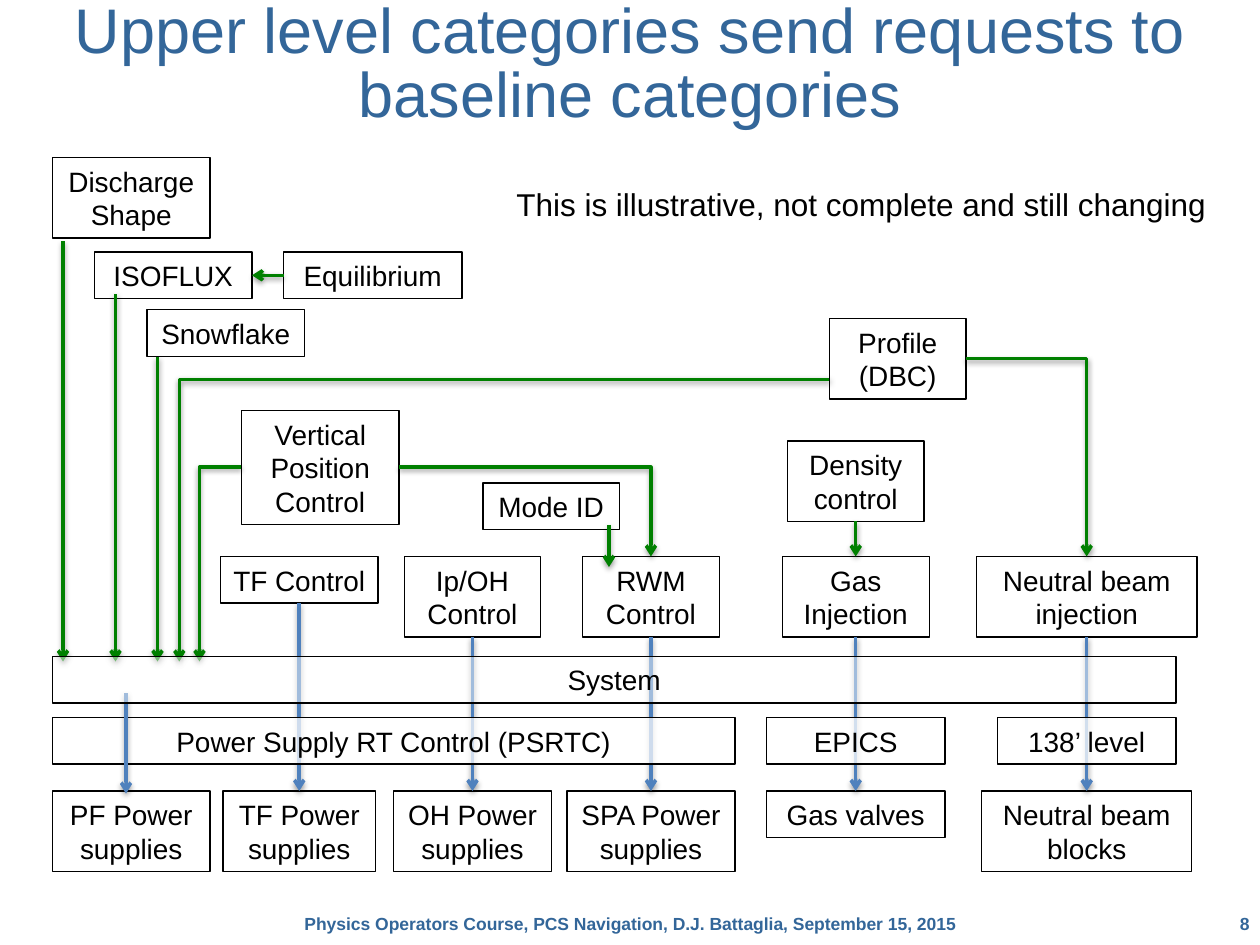
from lxml import etree
from pptx import Presentation
from pptx.dml.color import RGBColor
from pptx.enum.shapes import MSO_CONNECTOR, MSO_SHAPE
from pptx.enum.text import MSO_ANCHOR, MSO_AUTO_SIZE, PP_ALIGN
from pptx.oxml.ns import qn
from pptx.util import Pt

RECTANGLE = MSO_SHAPE.RECTANGLE
STRAIGHT, ELBOW = MSO_CONNECTOR.STRAIGHT, MSO_CONNECTOR.ELBOW
LEFT, CENTER, RIGHT = PP_ALIGN.LEFT, PP_ALIGN.CENTER, PP_ALIGN.RIGHT
MIDDLE = MSO_ANCHOR.MIDDLE
NO_AUTOFIT = MSO_AUTO_SIZE.NONE
TOP_SIDE, LEFT_SIDE, BOTTOM_SIDE, RIGHT_SIDE = range(4)

BLACK = RGBColor(0x00, 0x00, 0x00)
WHITE = RGBColor(0xFF, 0xFF, 0xFF)
TITLE_BLUE = RGBColor(0x33, 0x66, 0x99)
FLOW_BLUE = RGBColor(0x4F, 0x81, 0xBD)
REQUEST_GREEN = RGBColor(0x00, 0x80, 0x00)
FONT = "Arial"
BOX_HEIGHTS = {1: 26.7, 2: 46, 3: 65.4}

UPPER = [
    ("Discharge Shape", 0, 0, 90, 2),
    ("Vertical Position Control", 108, 144.5, 90, 3),
    ("ISOFLUX", 24, 54, 90, 1),
    ("Mode ID", 246, 186, 78, 1),
    ("Equilibrium", 132, 54, 102, 1),
    ("Snowflake", 54, 87, 90, 1),
    ("Density control", 420, 162, 78, 2),
    ("Profile (DBC)", 444, 92, 78, 2),
]
BASELINE = [
    ("TF Control", 96, 0, 90, 1),
    ("Ip/OH Control", 201, 0, 78, 2),
    ("RWM Control", 303, 0, 78, 2),
    ("Gas Injection", 417, 0, 84, 2),
    ("Neutral beam injection", 528, 0, 126, 2),
]
HARDWARE = [
    ("PF Power supplies", 0, 0, 90, 2),
    ("TF Power supplies", 97.5, 0, 87, 2),
    ("OH Power supplies", 195, 0, 90, 2),
    ("SPA Power supplies", 294, 0, 96, 2),
    ("Gas valves", 408, 0, 102, 1),
    ("Neutral beam blocks", 531, 0, 120, 2),
]
INTERFACES = [
    ("Power Supply RT Control (PSRTC)", 0, 0, 390, 1, 73),
    ("EPICS", 408, 0, 102, 1, 75),
    ("138’ level", 540, 0, 102, 1, 74),
]


def style_text(frame, text, size, color, align, bold=False):
    """Write one paragraph and format its run."""
    frame.text = text
    para = frame.paragraphs[0]
    para.alignment = align
    font = para.runs[0].font
    font.name, font.size, font.bold = FONT, Pt(size), bold
    font.color.rgb = color


def add_label(page, left, top, width, height, text, size, color, align, bold=False):
    """Add a plain text box."""
    box = page.shapes.add_textbox(Pt(left), Pt(top), Pt(width), Pt(height))
    frame = box.text_frame
    frame.word_wrap = bold
    if bold:
        frame.margin_left = frame.margin_right = 0
    style_text(frame, text, size, color, align, bold)


def add_box(page, left, top, width, lines, text, opacity=None):
    """Add an outlined category box, veiled in white if an opacity is given."""
    box = page.shapes.add_shape(
        RECTANGLE, Pt(left), Pt(top), Pt(width), Pt(BOX_HEIGHTS[lines]))
    box.shadow.inherit = False
    box.line.color.rgb = BLACK
    box.line.width = Pt(0.75)
    if opacity is None:
        box.fill.background()
    else:
        box.fill.solid()
        box.fill.fore_color.rgb = WHITE
        color = box.fill._xPr.find(".//" + qn("a:srgbClr"))
        etree.SubElement(color, qn("a:alpha"), val=str(opacity * 1000))
    box.text_frame.word_wrap = True
    style_text(box.text_frame, text, 16, BLACK, CENTER)
    return box


def add_region(page, left, top, items):
    """Place a group of boxes from its top left corner and return them by name."""
    return {
        text: add_box(page, left + x, top + y, width, lines, text, *opacity)
        for text, x, y, width, lines, *opacity in items
    }


def add_arrow(page, color, start=(0, 0), end=(0, 0), kind=STRAIGHT):
    """Add an arrow; an elbow runs sideways first and then down."""
    arrow = page.shapes.add_connector(
        kind, Pt(start[0]), Pt(start[1]), Pt(end[0]), Pt(end[1]))
    arrow.line.color.rgb = color
    arrow.line.width = Pt(2)
    etree.SubElement(arrow.line._get_or_add_ln(), qn("a:tailEnd"), type="arrow")
    if kind == ELBOW:
        arrow._element.spPr.find(qn("a:prstGeom")).set("prst", "bentConnector2")
    return arrow


def join_boxes(page, color, source, target, from_side=BOTTOM_SIDE, to_side=TOP_SIDE):
    """Join the sides of two boxes with a straight arrow."""
    arrow = add_arrow(page, color)
    arrow.begin_connect(source, from_side)
    arrow.end_connect(target, to_side)


def add_requests(page, boxes, left, top):
    """Draw the green requests from the upper categories."""
    for x, y in ((6, 48), (36, 78), (60, 114)):
        add_arrow(page, REQUEST_GREEN, (left + x, top + y), (left + x, top + 288))
    for start, end in (
        ((108, 177), (84, 288)),
        ((198, 177), (342, 228)),
        ((444, 126.75), (72.5, 288)),
        ((522, 115), (591, 228)),
    ):
        add_arrow(page, REQUEST_GREEN, (left + start[0], top + start[1]),
                  (left + end[0], top + end[1]), ELBOW)
    add_arrow(page, REQUEST_GREEN, (left + 318, top + 210), (left + 318, top + 234))
    join_boxes(page, REQUEST_GREEN, boxes["Equilibrium"], boxes["ISOFLUX"],
               LEFT_SIDE, RIGHT_SIDE)
    join_boxes(page, REQUEST_GREEN, boxes["Density control"], boxes["Gas Injection"])


def add_title(page, left, top, width, height):
    """Place the slide title."""
    title = page.shapes.title
    title.left, title.top = Pt(left), Pt(top)
    title.width, title.height = Pt(width), Pt(height)
    frame = title.text_frame
    style_text(frame, "Upper level categories send requests to baseline categories",
               36, TITLE_BLUE, CENTER)
    frame.paragraphs[0].line_spacing = 0.85
    frame.vertical_anchor = MIDDLE
    frame.auto_size = NO_AUTOFIT
    frame.margin_left = frame.margin_right = Pt(3.6)


def add_footer(page, left, top, width, height):
    """Place the course line and the page number."""
    add_label(page, left + 72, top, width - 144, height,
              "Physics Operators Course, PCS Navigation, D.J. Battaglia, September 15, 2015",
              10, TITLE_BLUE, CENTER, True)
    add_label(page, left + width - 54, top, 48, height, "8", 10, TITLE_BLUE, RIGHT, True)


def add_diagram(page, left, top):
    """Draw the categories, layers and arrows from back to front."""
    boxes = add_region(page, left, top, UPPER)
    boxes.update(add_region(page, left, top + 228, BASELINE))
    boxes.update(add_region(page, left, top + 362, HARDWARE))
    for source, target in zip(BASELINE, HARDWARE[1:]):
        join_boxes(page, FLOW_BLUE, boxes[source[0]], boxes[target[0]])
    add_region(page, left, top + 320, INTERFACES)
    add_requests(page, boxes, left, top)
    add_arrow(page, FLOW_BLUE, (left + 42, top + 306), (left + 42, top + 363.5))
    add_box(page, left, top + 285, 642, 1, "System", 47)


def main():
    """Build and save the slide."""
    deck = Presentation()
    deck.slide_width, deck.slide_height = Pt(720), Pt(540)
    page = deck.slides.add_slide(deck.slide_layouts[5])
    add_footer(page, 0, 518.4, 720, 19.4)
    add_title(page, 0, 0, 720, 75.6)
    add_diagram(page, 30, 90)
    add_label(page, 288, 102, 412.5, 29, "This is illustrative, not complete and still changing",
              18, BLACK, LEFT)
    deck.save("out.pptx")


if __name__ == "__main__":
    main()
